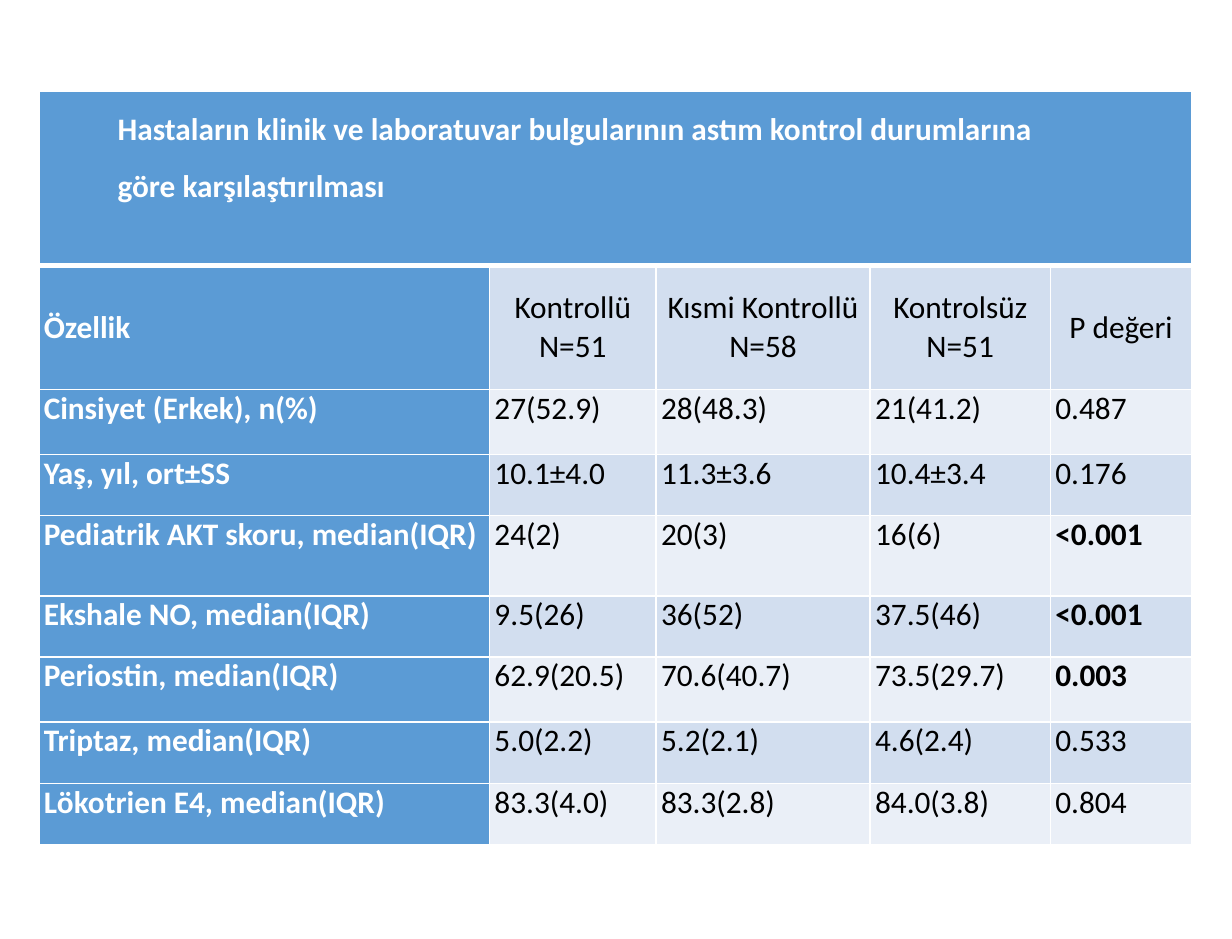
from dataclasses import dataclass

from lxml import etree
from pptx import Presentation
from pptx.dml.color import RGBColor
from pptx.enum import text
from pptx.oxml import ns
from pptx.table import _Cell
from pptx.util import Inches, Pt

BLUE, BAND_DARK, BAND_LIGHT = "5B9BD5", "D2DEEF", "EAEFF7"
WHITE, BLACK = "FFFFFF", "000000"
COLUMN_WIDTHS = [3.6, 1.33, 1.71, 1.44, 1.13]
ROW_HEIGHTS = [1.39, 0.99, 0.52, 0.49, 0.64, 0.49, 0.52, 0.49, 0.49]
SIGNIFICANT = ("<0.001", "0.003")

TITLE = ("Hastaların klinik ve laboratuvar bulgularının astım kontrol durumlarına\n"
         "göre karşılaştırılması")
ROWS = [
    ["Özellik", "Kontrollü\nN=51", "Kısmi Kontrollü\nN=58", "Kontrolsüz\nN=51", "P değeri"],
    ["Cinsiyet (Erkek), n(%)", "27(52.9)", "28(48.3)", "21(41.2)", "0.487"],
    ["Yaş, yıl, ort±SS", "10.1±4.0", "11.3±3.6", "10.4±3.4", "0.176"],
    ["Pediatrik AKT skoru, median(IQR)", "24(2)", "20(3)", "16(6)", "<0.001"],
    ["Ekshale NO, median(IQR)", "9.5(26)", "36(52)", "37.5(46)", "<0.001"],
    ["Periostin, median(IQR)", "62.9(20.5)", "70.6(40.7)", "73.5(29.7)", "0.003"],
    ["Triptaz, median(IQR)", "5.0(2.2)", "5.2(2.1)", "4.6(2.4)", "0.533"],
    ["Lökotrien E4, median(IQR)", "83.3(4.0)", "83.3(2.8)", "84.0(3.8)", "0.804"],
]


@dataclass
class CellStyle:
    fill: str
    color: str = BLACK
    bold: bool = False
    align: text.PP_ALIGN = text.PP_ALIGN.LEFT
    anchor: text.MSO_ANCHOR = text.MSO_ANCHOR.TOP
    first_indent: float = 0
    line_spacing: float = 1.0
    top_border: float = 1
    bottom_border: float = 1


def rgb(value: str) -> RGBColor:
    return RGBColor.from_string(value)


def set_borders(cell: _Cell, style: CellStyle) -> None:
    properties = cell._tc.get_or_add_tcPr()
    widths = {"lnL": 1, "lnR": 1, "lnT": style.top_border, "lnB": style.bottom_border}
    for position, (side, width) in enumerate(widths.items()):
        line = etree.Element(ns.qn(f"a:{side}"), w=str(Pt(width)))
        fill = etree.SubElement(line, ns.qn("a:solidFill"))
        etree.SubElement(fill, ns.qn("a:srgbClr"), val=WHITE)
        properties.insert(position, line)


def format_cell(cell: _Cell, wording: str, style: CellStyle) -> None:
    cell.text = wording
    cell.margin_left = cell.margin_right = Inches(0.04)
    cell.margin_top = cell.margin_bottom = 0
    cell.vertical_anchor = style.anchor
    cell.fill.solid()
    cell.fill.fore_color.rgb = rgb(style.fill)
    set_borders(cell, style)
    for para in cell.text_frame.paragraphs:
        para.alignment = style.align
        para.line_spacing = style.line_spacing
        if style.first_indent:
            para._p.get_or_add_pPr().set("indent", str(Inches(style.first_indent)))
        para.font.name = "Calibri"
        para.font.size = Pt(18)
        para.font.bold = style.bold
        para.font.color.rgb = rgb(style.color)


def body_style(row: int, column: int, wording: str) -> CellStyle:
    is_header = row == 1
    style = CellStyle(fill=BAND_DARK if row % 2 else BAND_LIGHT,
                      bold=wording in SIGNIFICANT)
    if is_header:
        style.anchor = text.MSO_ANCHOR.MIDDLE
        style.align = text.PP_ALIGN.CENTER
        style.top_border = 3
    if column == 0:
        style.fill, style.color, style.bold = BLUE, WHITE, True
        style.align = text.PP_ALIGN.LEFT
    return style


def main() -> None:
    deck = Presentation()
    deck.slide_width, deck.slide_height = Inches(9.84), Inches(7.5)
    page = deck.slides.add_slide(deck.slide_layouts[6])

    # Table grid
    frame = page.shapes.add_table(len(ROW_HEIGHTS), len(COLUMN_WIDTHS), Inches(0.31),
                                  Inches(0.73), Inches(9.21), Inches(6.03))
    table = frame.table
    for column, width in zip(table.columns, COLUMN_WIDTHS):
        column.width = Inches(width)
    for row, height in zip(table.rows, ROW_HEIGHTS):
        row.height = Inches(height)

    # Title band across all columns
    title_style = CellStyle(BLUE, WHITE, True, text.PP_ALIGN.JUSTIFY, first_indent=0.59,
                            line_spacing=1.5, bottom_border=3)
    table.cell(0, 0).merge(table.cell(0, len(COLUMN_WIDTHS) - 1))
    format_cell(table.cell(0, 0), TITLE, title_style)

    # Group headings and findings
    for row, wordings in enumerate(ROWS, start=1):
        for column, wording in enumerate(wordings):
            format_cell(table.cell(row, column), wording, body_style(row, column, wording))

    deck.save("out.pptx")


if __name__ == "__main__":
    main()
